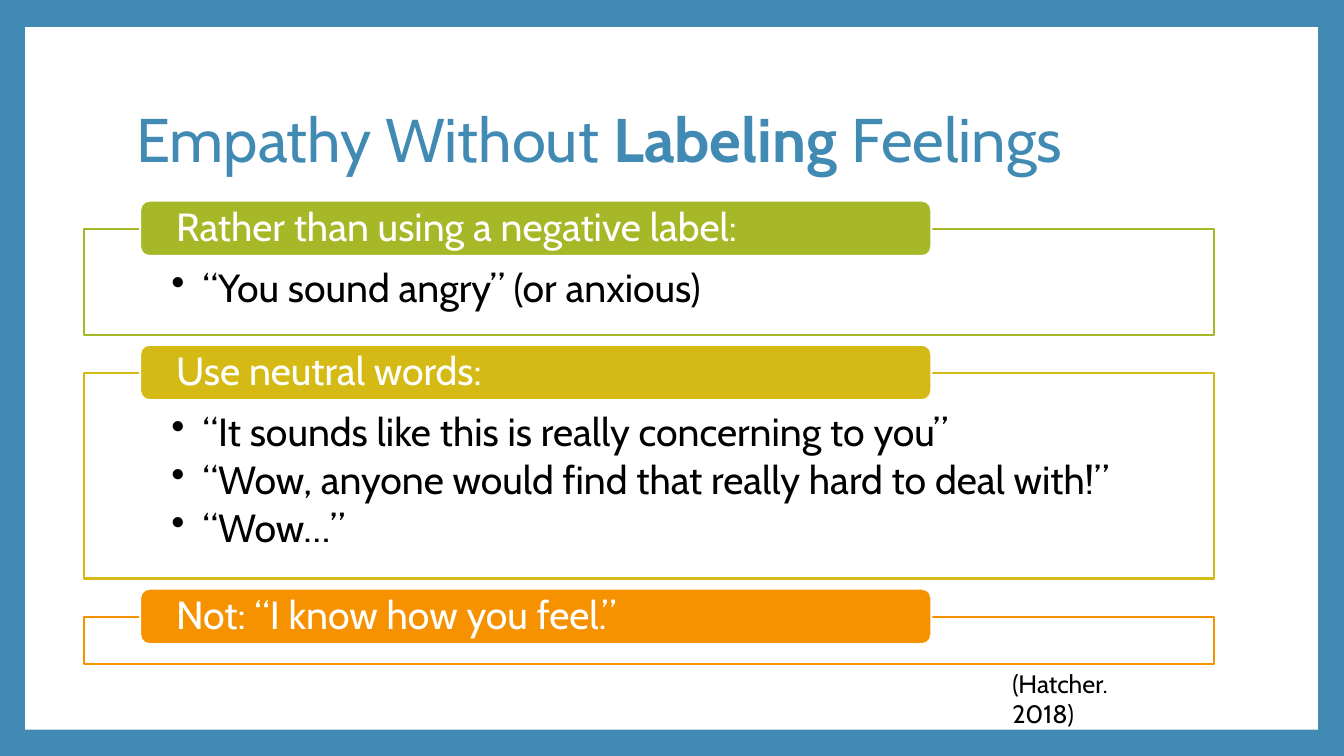
from dataclasses import dataclass

from lxml import etree
from pptx import Presentation
from pptx.dml.color import RGBColor
from pptx.enum import shapes, text
from pptx.oxml import ns
from pptx.util import Inches, Pt


@dataclass(frozen=True)
class Theme:
    font: str = "Cabin"
    blue: str = "418AB3"
    green: str = "A6B727"
    yellow: str = "D5BA15"
    orange: str = "F69200"
    white: str = "FFFFFF"
    black: str = "000000"
    title: int = 44
    body: int = 28
    note: int = 18
    line: float = 1.5


T = Theme()
GAP = 0.38  # from one frame to the next
SECTIONS = [  # heading, colour, frame height, bullets
    ("Rather than using a negative label:", T.green, 1.05,
     ["“You sound angry” (or anxious)"]),
    ("Use neutral words:", T.yellow, 2.04,
     ["“It sounds like this is really concerning to you”",
      "“Wow, anyone would find that really hard to deal with!”",
      "“Wow…”"]),
    ("Not: “I know how you feel.”", T.orange, 0.47, []),
]


def add_run(p, words, size, color, bold=False):
    r = p.add_run()
    r.text = words
    r.font.name, r.font.size, r.font.bold = T.font, Pt(size), bold
    r.font.color.rgb = RGBColor.from_string(color)


def set_frame(tf, insets, anchor):
    tf.word_wrap = True
    tf.auto_size = text.MSO_AUTO_SIZE.NONE
    tf.vertical_anchor = anchor
    tf.margin_left, tf.margin_top, tf.margin_right, tf.margin_bottom = map(Inches, insets)


def add_box(s, kind, box, fill, line=None):
    sp = s.shapes.add_shape(kind, *map(Inches, box))
    sp.shadow.inherit = False
    sp.fill.solid()
    sp.fill.fore_color.rgb = RGBColor.from_string(fill)
    if line:
        sp.line.color.rgb = RGBColor.from_string(line)
        sp.line.width = Pt(T.line)
    else:
        sp.line.fill.background()
    return sp


def add_bullet(p):
    pPr = p._p.get_or_add_pPr()
    pPr.set("marL", str(Inches(0.31)))
    pPr.set("indent", str(-Inches(0.31)))
    etree.SubElement(pPr, ns.qn("a:buChar"), char="•")


def add_title(s, box):
    sp = s.shapes.title
    sp.left, sp.top, sp.width, sp.height = map(Inches, box)
    set_frame(sp.text_frame, (0.1, 0.05, 0.1, 0.05), text.MSO_ANCHOR.MIDDLE)
    p = sp.text_frame.paragraphs[0]
    p.alignment, p.line_spacing = text.PP_ALIGN.LEFT, 0.9
    add_run(p, "Empathy Without ", T.title, T.blue)
    add_run(p, "Labeling", T.title, T.blue, bold=True)
    add_run(p, " Feelings", T.title, T.blue)


def add_backdrop(s, box):
    s.background.fill.solid()
    s.background.fill.fore_color.rgb = RGBColor.from_string(T.blue)
    sp = add_box(s, shapes.MSO_SHAPE.RECTANGLE, box, T.white)
    s.shapes.title.element.addprevious(sp.element)


def add_section(s, box, heading, color, bullets):
    left, top, width, height = box

    # Outlined frame with the bullets
    sp = add_box(s, shapes.MSO_SHAPE.RECTANGLE, box, T.white, color)
    clr = sp.element.spPr.find(ns.qn("a:solidFill"))[0]
    etree.SubElement(clr, ns.qn("a:alpha"), val="90000")
    tf = sp.text_frame
    set_frame(tf, (0.87, 0.39, 0.87, 0.22), text.MSO_ANCHOR.TOP)
    for i, words in enumerate(bullets):
        p = tf.add_paragraph() if i else tf.paragraphs[0]
        p.alignment, p.line_spacing, p.space_after = text.PP_ALIGN.LEFT, 0.9, Pt(4)
        add_bullet(p)
        add_run(p, words, T.body, T.black)

    # Heading bar across the top edge
    bar = (left + 0.56, top - 0.28, width * 0.7, 0.55)
    sp = add_box(s, shapes.MSO_SHAPE.ROUNDED_RECTANGLE, bar, color, T.white)
    set_frame(sp.text_frame, (0.33, 0, 0.33, 0), text.MSO_ANCHOR.MIDDLE)
    p = sp.text_frame.paragraphs[0]
    p.alignment, p.line_spacing = text.PP_ALIGN.LEFT, 0.9
    add_run(p, heading, T.body, T.white)


def add_citation(s, box):
    sp = s.shapes.add_textbox(*map(Inches, box))
    set_frame(sp.text_frame, (0.12, 0.06, 0.12, 0.06), text.MSO_ANCHOR.MIDDLE)
    add_run(sp.text_frame.paragraphs[0], "(Hatcher. 2018)", T.note, T.black)


def main():
    prs = Presentation()
    prs.slide_width, prs.slide_height = Inches(13.33), Inches(7.5)
    s = prs.slides.add_slide(prs.slide_layouts[5])
    add_backdrop(s, (0.25, 0.27, 12.82, 6.97))
    add_title(s, (1.25, 0.67, 10.8, 1.48))
    add_citation(s, (9.92, 6.72, 1.83, 0.42))
    top = 2.27
    for heading, color, height, bullets in SECTIONS:
        add_section(s, (0.83, top, 11.21, height), heading, color, bullets)
        top += height + GAP
    prs.save("out.pptx")


if __name__ == "__main__":
    main()
